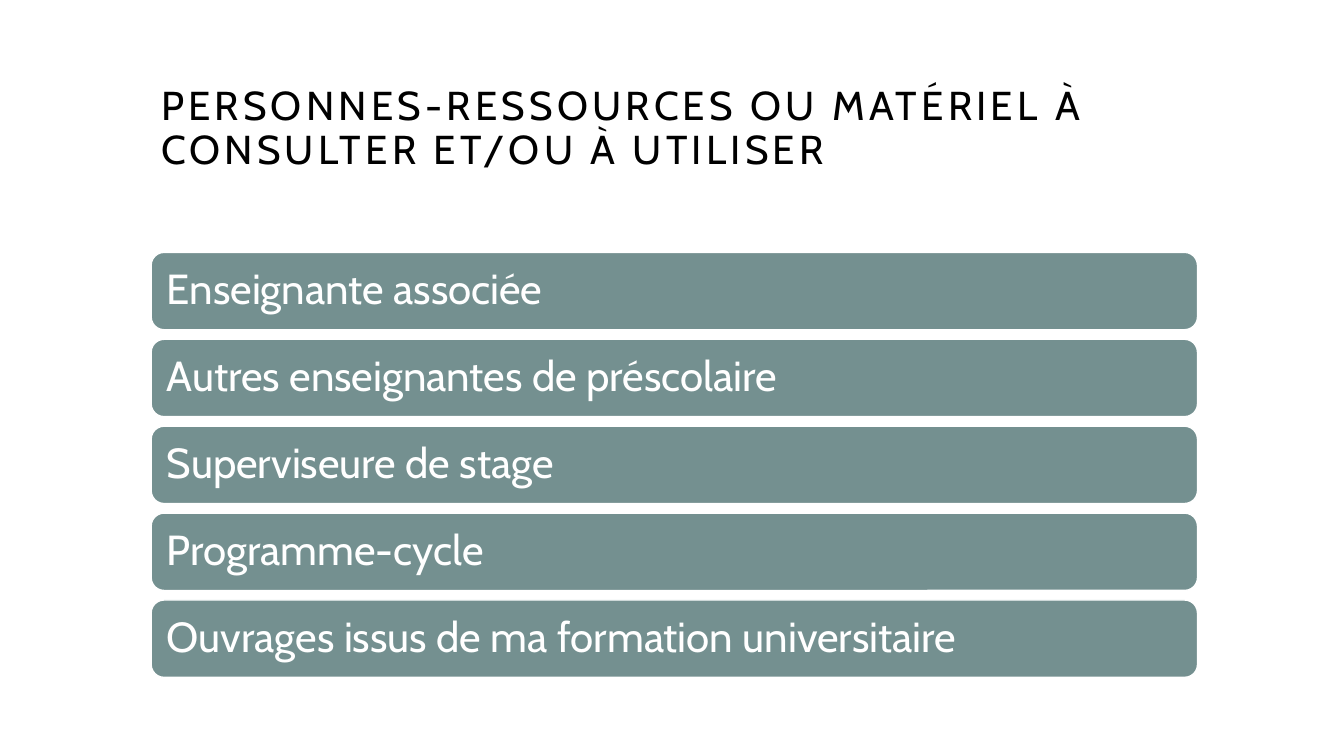
from pptx import Presentation
from pptx import util as u
from pptx.dml.color import RGBColor
from pptx.enum import shapes, text

FONT = "Cabin"
TITLE = "PERSONNES-RESSOURCES OU MATÉRIEL À CONSULTER ET/OU À UTILISER"
RESOURCES = [
    "Enseignante associée",
    "Autres enseignantes de préscolaire",
    "Superviseure de stage",
    "Programme-cycle",
    "Ouvrages issus de ma formation universitaire",
]


def color(value):
    return RGBColor.from_string(value)


def write(frame, words, size, ink, anchor):
    """Fill a text frame with one left-aligned run and return the run."""
    frame.word_wrap = True
    frame.vertical_anchor = anchor
    paragraph = frame.paragraphs[0]
    paragraph.alignment = text.PP_ALIGN.LEFT
    paragraph.line_spacing = 0.9
    run = paragraph.add_run()
    run.text = words
    run.font.name = FONT
    run.font.size = u.Pt(size)
    run.font.color.rgb = color(ink)
    return run


def add_title(slide, left, top, width, height):
    heading = slide.shapes.add_textbox(u.Cm(left), u.Cm(top), u.Cm(width), u.Cm(height))
    heading.text_frame.margin_bottom = u.Cm(1.35)
    run = write(heading.text_frame, TITLE, 28.8, "000000", text.MSO_ANCHOR.BOTTOM)
    run.font._element.set("spc", "300")


def add_resource_list(slide, left, top, width, height, gap=0.24):
    """Stack one rounded bar per resource, evenly spread over the box."""
    bar_height = (height - gap * (len(RESOURCES) - 1)) / len(RESOURCES)
    for index, resource in enumerate(RESOURCES):
        bar_top = top + index * (bar_height + gap)
        bar = slide.shapes.add_shape(
            shapes.MSO_SHAPE.ROUNDED_RECTANGLE,
            u.Cm(left), u.Cm(bar_top), u.Cm(width), u.Cm(bar_height))
        bar.shadow.inherit = False
        bar.fill.solid()
        bar.fill.fore_color.rgb = color("749090")
        bar.line.color.rgb = color("FFFFFF")
        bar.line.width = u.Pt(1)
        # The rounded outline already insets its text by about 0.1 cm.
        frame = bar.text_frame
        frame.margin_left = frame.margin_right = u.Cm(0.3)
        frame.margin_top = frame.margin_bottom = u.Cm(0.2)
        write(frame, resource, 30, "FFFFFF", text.MSO_ANCHOR.MIDDLE)


def main():
    deck = Presentation()
    deck.slide_width, deck.slide_height = u.Cm(33.87), u.Cm(19.05)
    slide = deck.slides.add_slide(deck.slide_layouts[6])
    add_title(slide, 3.81, 1.9, 26.37, 3.81)
    add_resource_list(slide, 3.81, 6.36, 26.37, 10.71)
    deck.save("out.pptx")


if __name__ == "__main__":
    main()
